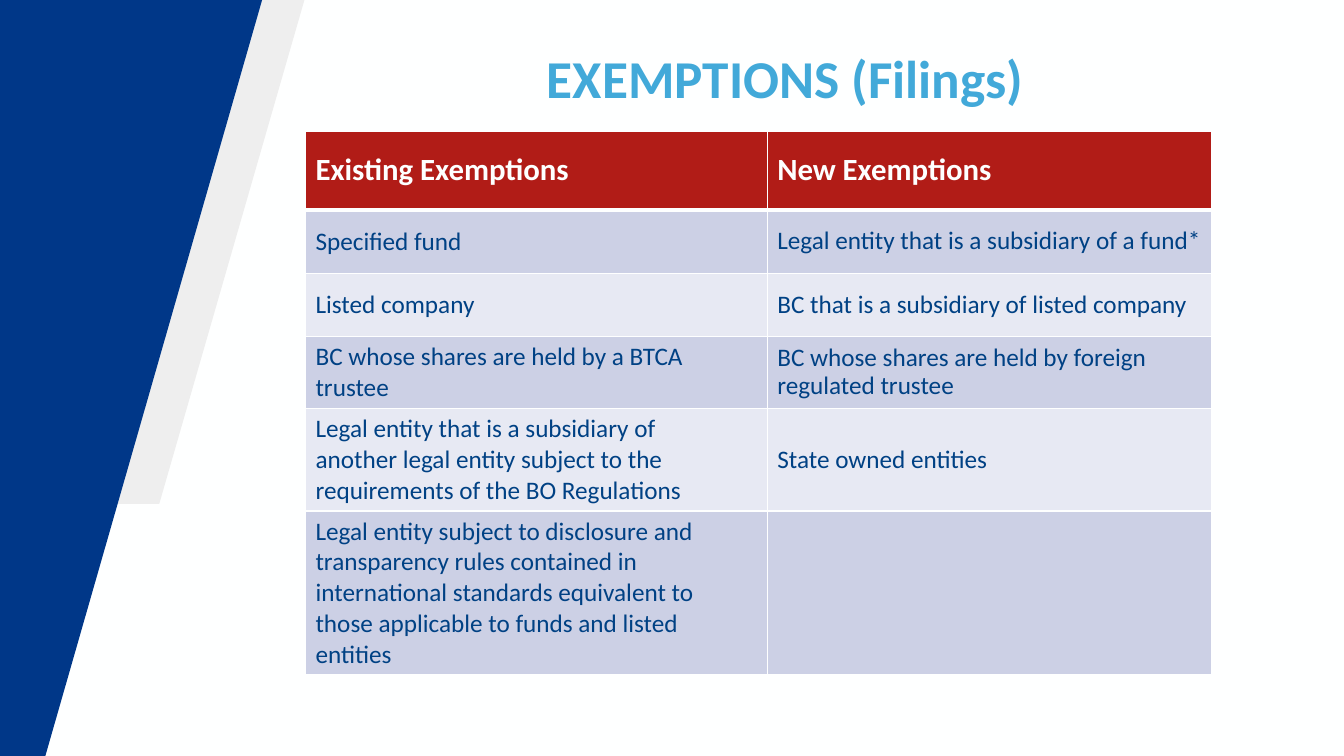
from lxml import etree
from pptx import Presentation
from pptx import util as u
from pptx.dml.color import RGBColor
from pptx.enum import text
from pptx.oxml import ns

WHITE, GREY, NAVY = "FEFFFF", "EEEEEE", "003788"
SKY, RED, INK = "42A9D9", "B11C17", "004184"
BANDS = ("CCD0E5", "E7E9F3")

HEADINGS = ("Existing Exemptions", "New Exemptions")
# Each cell is a tuple of paragraphs.
EXEMPTIONS = [
    (("Specified fund",), ("Legal entity that is a subsidiary of a fund*",)),
    (("Listed company",), ("BC that is a subsidiary of listed company",)),
    (("BC whose shares are held by a BTCA", "trustee"),
     ("BC whose shares are held by foreign regulated trustee",)),
    (("Legal entity that is a subsidiary of",
      "another legal entity subject to the requirements of the BO Regulations"),
     ("State owned entities",)),
    (("Legal entity subject to disclosure and",
      "transparency rules contained in",
      "international standards equivalent to",
      "those applicable to funds and listed",
      "entities"), ()),
]
# Cells set with tighter lines, as (row, column).
TIGHT_CELLS = {(1, 1), (2, 0), (2, 1), (3, 1)}


def rgb(value):
    return RGBColor.from_string(value)


def paint(fill, colour):
    fill.solid()
    fill.fore_color.rgb = rgb(colour)


class SlideBuilder:
    font = "Calibri"

    def __init__(self, slide):
        self.slide = slide
        paint(slide.background.fill, WHITE)

    def add_run(self, paragraph, words, size, colour, bold=False):
        run = paragraph.add_run()
        run.text = words
        run.font.name = self.font
        run.font.size = u.Pt(size)
        run.font.bold = bold
        run.font.color.rgb = rgb(colour)

    def panel(self, corners, colour):
        points = [(u.Inches(x), u.Inches(y)) for x, y in corners]
        outline = self.slide.shapes.build_freeform(*points[0])
        outline.add_line_segments(points[1:], close=True)
        panel = outline.convert_to_shape()
        panel.shadow.inherit = False
        paint(panel.fill, colour)
        panel.line.fill.background()

    def title(self, words, left, top, width, height):
        title = self.slide.shapes.title
        title.left, title.top = u.Inches(left), u.Inches(top)
        title.width, title.height = u.Inches(width), u.Inches(height)
        frame = title.text_frame
        frame.word_wrap = True
        frame.auto_size = text.MSO_AUTO_SIZE.NONE
        frame.vertical_anchor = text.MSO_ANCHOR.TOP
        heading = frame.paragraphs[0]
        heading.alignment = text.PP_ALIGN.CENTER
        heading.line_spacing = 0.9
        heading.space_before = u.Pt(0)
        self.add_run(heading, words, 38, SKY, bold=True)

    def cell_borders(self, cell, **widths):
        """Draw white borders; widths in points, keyed by side L, R, T, B."""
        properties = cell._tc.get_or_add_tcPr()
        for position, (side, width) in enumerate(widths.items()):
            line = etree.Element(ns.qn(f"a:ln{side}"), w=str(u.Pt(width)))
            fill = etree.SubElement(line, ns.qn("a:solidFill"))
            etree.SubElement(fill, ns.qn("a:srgbClr"), val=WHITE)
            properties.insert(position, line)

    def table(self, rows, left, top, widths, heights):
        table = self.slide.shapes.add_table(
            len(rows), len(widths), u.Inches(left), u.Inches(top),
            u.Inches(sum(widths)), u.Inches(sum(heights))).table
        for column, width in zip(table.columns, widths):
            column.width = u.Inches(width)
        for row, height in zip(table.rows, heights):
            row.height = u.Inches(height)
        for r, row in enumerate(rows):
            for c, paragraphs in enumerate(row):
                self.cell(table.cell(r, c), paragraphs, r, (r, c) in TIGHT_CELLS)

    def cell(self, cell, paragraphs, row, tight):
        header = row == 0
        cell.vertical_anchor = text.MSO_ANCHOR.MIDDLE
        paint(cell.fill, RED if header else BANDS[(row - 1) % 2])
        self.cell_borders(cell, L=1, R=1, T=3 if row == 1 else 1,
                          B=3 if header else 1)
        for index, words in enumerate(paragraphs):
            frame = cell.text_frame
            paragraph = frame.add_paragraph() if index else frame.paragraphs[0]
            if tight:
                paragraph.line_spacing = 0.9
            self.add_run(paragraph, words, 22 if header else 18,
                         WHITE if header else INK, bold=header)


def main():
    deck = Presentation()
    deck.slide_width, deck.slide_height = u.Inches(13.33), u.Inches(7.5)
    title_only = deck.slide_layouts[5]
    builder = SlideBuilder(deck.slides.add_slide(title_only))
    builder.panel([(2.6, 0), (3.02, 0), (1.58, 5), (1.16, 5)], GREY)
    builder.panel([(0, 0), (2.6, 0), (0.45, 7.5), (0, 7.5)], NAVY)
    builder.title("EXEMPTIONS (Filings)", 3.15, 0.47, 9.28, 0.9)
    header = tuple((heading,) for heading in HEADINGS)
    builder.table([header] + EXEMPTIONS, 3.03, 1.3, (4.58, 4.41),
                  (0.78, 0.63, 0.63, 0.7, 1.02, 1.62))
    deck.save("out.pptx")


if __name__ == "__main__":
    main()
